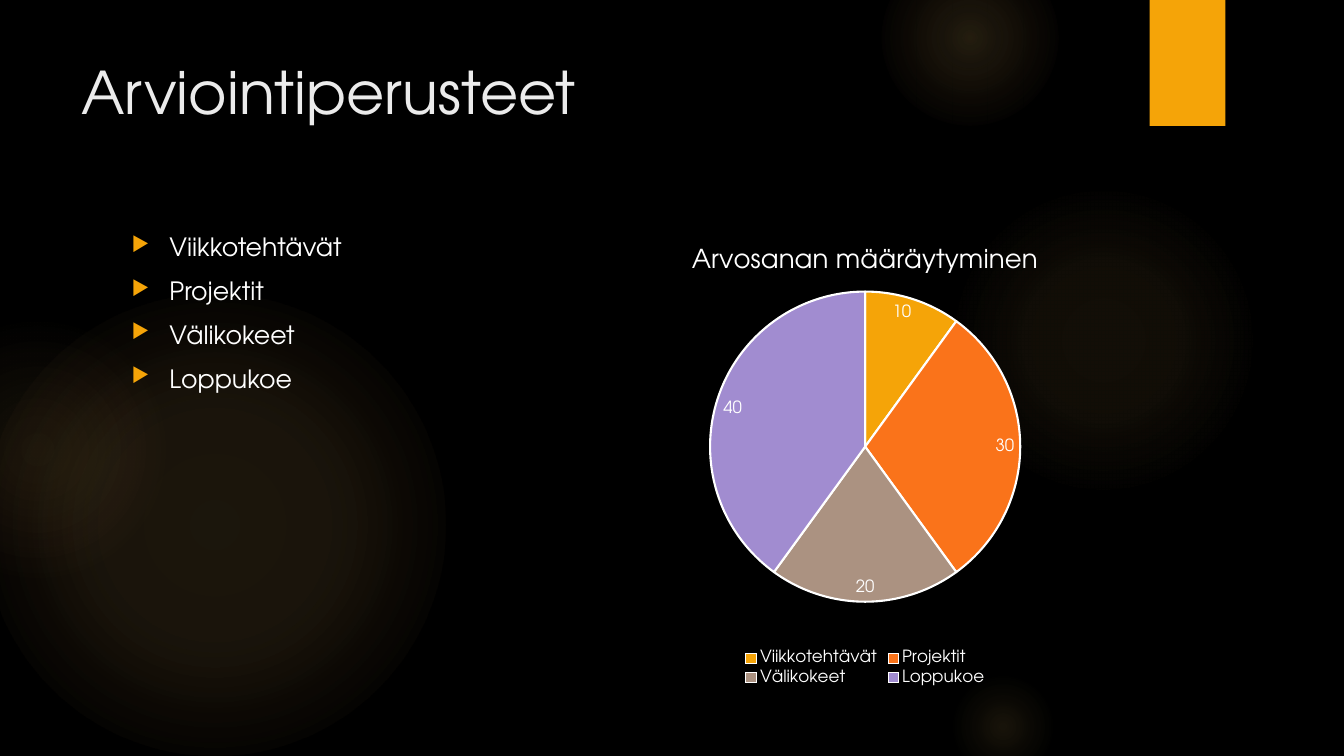
from lxml import etree
from pptx import Presentation
from pptx.chart.data import CategoryChartData
from pptx.dml.color import RGBColor
from pptx.enum.chart import XL_CHART_TYPE, XL_LABEL_POSITION, XL_LEGEND_POSITION
from pptx.enum.shapes import MSO_SHAPE
from pptx.enum.text import MSO_ANCHOR, PP_ALIGN
from pptx.oxml import parse_xml
from pptx.oxml.ns import nsdecls, qn
from pptx.util import Pt

PX = 9525  # 96 px to the inch
FONT = "TeX Gyre Adventor"
BLACK = RGBColor(0x00, 0x00, 0x00)
WHITE = RGBColor(0xFF, 0xFF, 0xFF)
PALE = RGBColor(0xEB, 0xEB, 0xEB)
AMBER = RGBColor(0xF5, 0xA4, 0x08)
GLOW = RGBColor(0xFA, 0xC9, 0x6A)
PEACH = RGBColor(0xF5, 0x9B, 0x74)
ORANGE = RGBColor(0xFA, 0x73, 0x1A)
TAUPE = RGBColor(0xAB, 0x92, 0x81)
LILAC = RGBColor(0xA1, 0x8C, 0xD0)

CHART_TITLE = "Arvosanan määräytyminen"
# Grading part, share of the grade, slice colour
PARTS = [
    ("Viikkotehtävät", 10, AMBER),
    ("Projektit", 30, ORANGE),
    ("Välikokeet", 20, TAUPE),
    ("Loppukoe", 40, LILAC),
]
# Left, top, diameter, then stops of (position %, colour, opacity %)
GLOWS = [
    (-16, 280, 440, [(0, GLOW, 11), (36, GLOW, 10), (75, GLOW, 0)]),
    (-88, 304, 248, [(0, GLOW, 8), (36, GLOW, 5), (71, PEACH, 0)]),
    (903, 176, 296, [(0, GLOW, 7), (36, GLOW, 6), (69, GLOW, 0)]),
    (840, -48, 168, [(0, GLOW, 14), (36, GLOW, 7), (73, GLOW, 0)]),
    (903, 640, 104, [(0, GLOW, 10), (31, GLOW, 5), (66, GLOW, 0)]),
]


def px(*lengths):
    return [n * PX for n in lengths]


def set_font(font, size, color):
    font.name, font.size, font.bold = FONT, Pt(size), False
    font.color.rgb = color


def add_plain_shape(slide, kind, box, color):
    sp = slide.shapes.add_shape(kind, *px(*box))
    sp.shadow.inherit = False
    sp.fill.solid()
    sp.fill.fore_color.rgb = color
    sp.line.fill.background()
    return sp


def add_glow(slide, left, top, size, stops):
    """Draw a circle that fades out from its centre."""
    sp = add_plain_shape(slide, MSO_SHAPE.OVAL, (left, top, size, size), GLOW)
    stop_xml = "".join(
        f'<a:gs pos="{pos * 1000}"><a:srgbClr val="{color}">'
        f'<a:alpha val="{alpha * 1000}"/></a:srgbClr></a:gs>'
        for pos, color, alpha in stops
    )
    gradient = parse_xml(
        f'<a:gradFill {nsdecls("a")} rotWithShape="1"><a:gsLst>{stop_xml}</a:gsLst>'
        '<a:path path="circle"><a:fillToRect l="50000" t="50000" r="50000" b="50000"/>'
        "</a:path></a:gradFill>"
    )
    spPr = sp.fill._xPr
    spPr.replace(spPr.find(qn("a:solidFill")), gradient)


def add_backdrop(slide):
    slide.background.fill.solid()
    slide.background.fill.fore_color.rgb = BLACK
    for glow in GLOWS:
        add_glow(slide, *glow)
    add_plain_shape(slide, MSO_SHAPE.RECTANGLE, (1095, 0, 72, 120), AMBER)


def add_title(slide, box, text):
    title = slide.shapes.title
    title.left, title.top, title.width, title.height = px(*box)
    tf = title.text_frame
    tf.word_wrap = True
    tf.vertical_anchor = MSO_ANCHOR.TOP
    p = tf.paragraphs[0]
    p.alignment = PP_ALIGN.LEFT
    r = p.add_run()
    r.text = text
    set_font(r.font, 42, PALE)


def add_bullet(p):
    pPr = p._p.get_or_add_pPr()
    pPr.set("marL", str(36 * PX))
    pPr.set("indent", str(-36 * PX))
    color = etree.SubElement(pPr, qn("a:buClr"))
    etree.SubElement(color, qn("a:srgbClr"), val=str(AMBER))
    etree.SubElement(pPr, qn("a:buSzPct"), val="80000")
    etree.SubElement(pPr, qn("a:buChar"), char="▶")


def add_bullets(slide, box, items):
    tf = slide.shapes.add_textbox(*px(*box)).text_frame
    tf.word_wrap = True
    for i, item in enumerate(items):
        p = tf.add_paragraph() if i else tf.paragraphs[0]
        p.space_before, p.space_after = Pt(3.6 if i else 0), Pt(6)
        add_bullet(p)
        r = p.add_run()
        r.text = item
        set_font(r.font, 18, WHITE)


def set_plot_layout(chart, x, y, w, h):
    """Fix the inner plot area, in fractions of the chart."""
    plot_area = chart._chartSpace.chart.plotArea
    for old in plot_area.findall(qn("c:layout")):
        plot_area.remove(old)
    values = dict(layoutTarget="inner", xMode="edge", yMode="edge", x=x, y=y, w=w, h=h)
    layout = etree.Element(qn("c:layout"))
    manual = etree.SubElement(layout, qn("c:manualLayout"))
    for name, value in values.items():
        etree.SubElement(manual, qn(f"c:{name}"), val=str(value))
    plot_area.insert(0, layout)


def add_grade_pie(slide, box):
    data = CategoryChartData()
    data.categories = [name for name, _, _ in PARTS]
    data.add_series(CHART_TITLE, [share for _, share, _ in PARTS])
    chart = slide.shapes.add_chart(XL_CHART_TYPE.PIE, *px(*box), data).chart
    set_font(chart.font, 10, WHITE)

    chart.has_title = True
    r = chart.chart_title.text_frame.paragraphs[0].add_run()
    r.text = CHART_TITLE
    set_font(r.font, 18.6, WHITE)

    chart.has_legend = True
    chart.legend.position = XL_LEGEND_POSITION.BOTTOM
    chart.legend.include_in_layout = False
    set_font(chart.legend.font, 12, WHITE)

    plot = chart.plots[0]
    plot.vary_by_categories = True
    series = plot.series[0]
    for i, (_, _, color) in enumerate(PARTS):
        slice_format = series.points[i].format
        slice_format.fill.solid()
        slice_format.fill.fore_color.rgb = color
        slice_format.line.color.rgb = WHITE
        slice_format.line.width = Pt(1.5)
    labels = series.data_labels
    labels.show_value = True
    labels.position = XL_LABEL_POSITION.INSIDE_END
    set_font(labels.font, 12, WHITE)
    set_plot_layout(chart, 0.18, 0.14, 0.64, 0.67)


def main():
    prs = Presentation()
    prs.slide_width, prs.slide_height = px(1280, 720)
    slide = prs.slides.add_slide(prs.slide_layouts[5])
    add_backdrop(slide)
    add_title(slide, (68, 48, 988, 147), "Arviointiperusteet")
    add_bullets(slide, (116, 216, 462, 441), [name for name, _, _ in PARTS])
    add_grade_pie(slide, (593, 216, 462, 441))
    prs.save("out.pptx")


if __name__ == "__main__":
    main()
